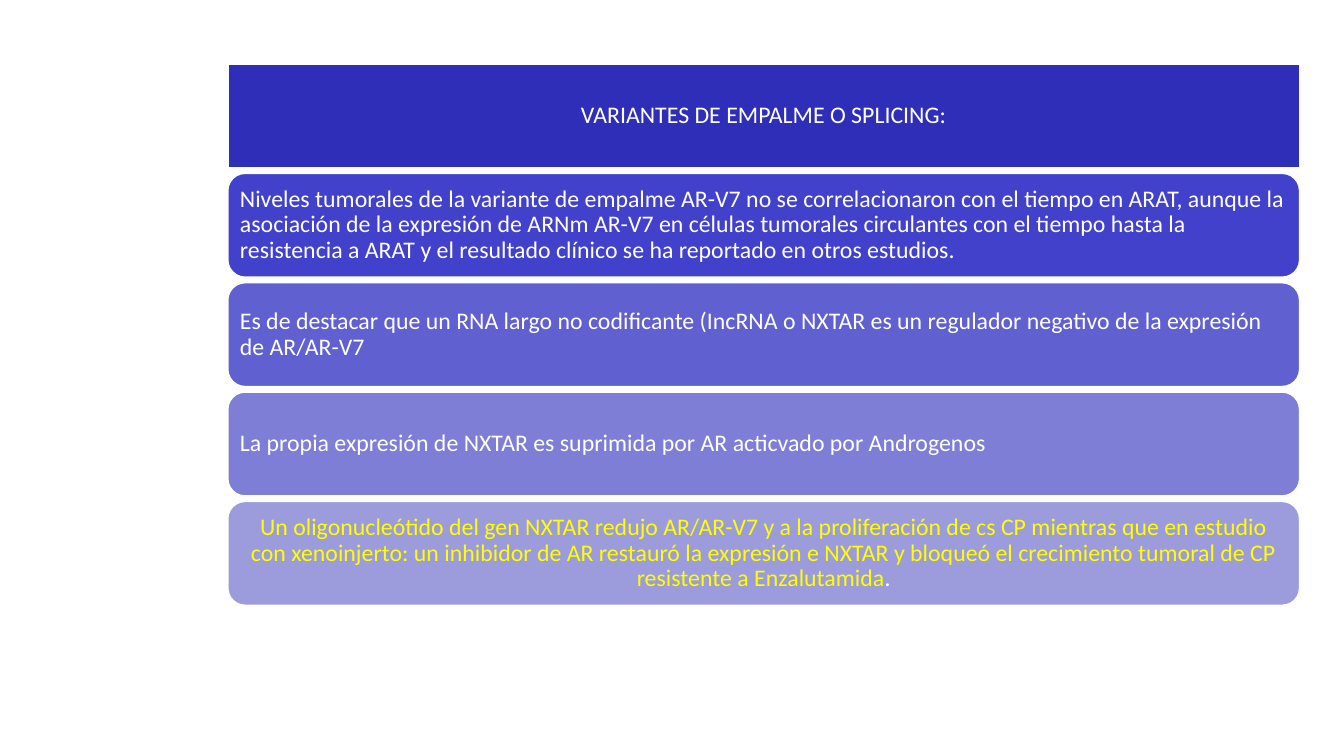
from dataclasses import dataclass

from lxml import etree
from pptx import Presentation
from pptx import util as u
from pptx.dml.color import RGBColor
from pptx.enum import shapes, text
from pptx.oxml.ns import qn

PX = 4572
LEFT, TOP, WIDTH, HEIGHT, PITCH = 452, 127, 2126, 206, 217
INSET = 14

COLORS = {
    "white": "FFFFFF",
    "yellow": "FFFF00",
    "heading": "2E2EB9",
    "levels": "4141CB",
    "regulator": "6060D0",
    "suppression": "7E7ED6",
    "inhibition": "9C9CDD",
}


@dataclass(frozen=True)
class Band:
    fill: str
    runs: tuple[tuple[str, str], ...]
    centered: bool = False


BANDS = (
    Band("heading", (("VARIANTES DE EMPALME O SPLICING:", "white"),), centered=True),
    Band("levels", ((
        "Niveles tumorales de la variante de empalme AR-V7 no se correlacionaron con el "
        "tiempo en ARAT, aunque la asociación de la expresión de ARNm AR-V7 en células "
        "tumorales circulantes con el tiempo hasta la resistencia a ARAT y el resultado "
        "clínico se ha reportado en otros estudios.", "white"),)),
    Band("regulator", ((
        "Es de destacar que un RNA largo no codificante (IncRNA o NXTAR es un regulador "
        "negativo de la expresión de AR/AR-V7", "white"),)),
    Band("suppression", ((
        "La propia expresión de NXTAR es suprimida por AR acticvado por Androgenos",
        "white"),)),
    Band("inhibition", ((
        "Un oligonucleótido del gen NXTAR redujo AR/AR-V7 y a la proliferación de cs CP "
        "mientras que en estudio con xenoinjerto: un inhibidor de AR restauró la expresión "
        "e NXTAR y bloqueó el crecimiento tumoral de CP resistente a Enzalutamida",
        "yellow"), (".", "white")), centered=True),
)


def px(length: int) -> u.Emu:
    return u.Emu(length * PX)


def color(name: str) -> RGBColor:
    return RGBColor.from_string(COLORS[name])


def write(frame, runs, *, size: int = 17, font: str = "Calibri", centered: bool = False) -> None:
    frame.word_wrap = True
    frame.auto_size = text.MSO_AUTO_SIZE.NONE
    frame.vertical_anchor = text.MSO_ANCHOR.MIDDLE
    frame.margin_left = frame.margin_right = px(INSET)
    frame.margin_top = frame.margin_bottom = px(INSET)
    paragraph = frame.paragraphs[0]
    paragraph.alignment = text.PP_ALIGN.CENTER if centered else text.PP_ALIGN.LEFT
    paragraph.line_spacing = 0.9
    paragraph.space_before = u.Pt(0)
    paragraph.space_after = u.Pt(6)
    for words, tint in runs:
        run = paragraph.add_run()
        run.text = words
        run.font.name = font
        run.font.size = u.Pt(size)
        run.font.color.rgb = color(tint)


def round_title(title) -> None:
    geometry = etree.SubElement(title._element.spPr, qn("a:prstGeom"), prst="roundRect")
    etree.SubElement(geometry, qn("a:avLst"))


def style_band(shape, band: Band) -> None:
    shape.fill.solid()
    shape.fill.fore_color.rgb = color(band.fill)
    shape.line.color.rgb = color("white")
    shape.line.width = u.Pt(1)
    write(shape.text_frame, band.runs, centered=band.centered)


def main() -> None:
    deck = Presentation()
    deck.slide_width, deck.slide_height = u.Inches(13.33), u.Inches(7.5)
    slide = deck.slides.add_slide(deck.slide_layouts.get_by_name("Title Only"))

    heading, *findings = BANDS
    title = slide.shapes.title
    title.left, title.top = px(LEFT), px(TOP)
    title.width, title.height = px(WIDTH), px(HEIGHT)
    round_title(title)
    style_band(title, heading)

    for row, finding in enumerate(findings, start=1):
        shape = slide.shapes.add_shape(
            shapes.MSO_SHAPE.ROUNDED_RECTANGLE,
            px(LEFT), px(TOP + row * PITCH), px(WIDTH), px(HEIGHT))
        shape.shadow.inherit = False
        style_band(shape, finding)

    deck.save("out.pptx")


if __name__ == "__main__":
    main()
